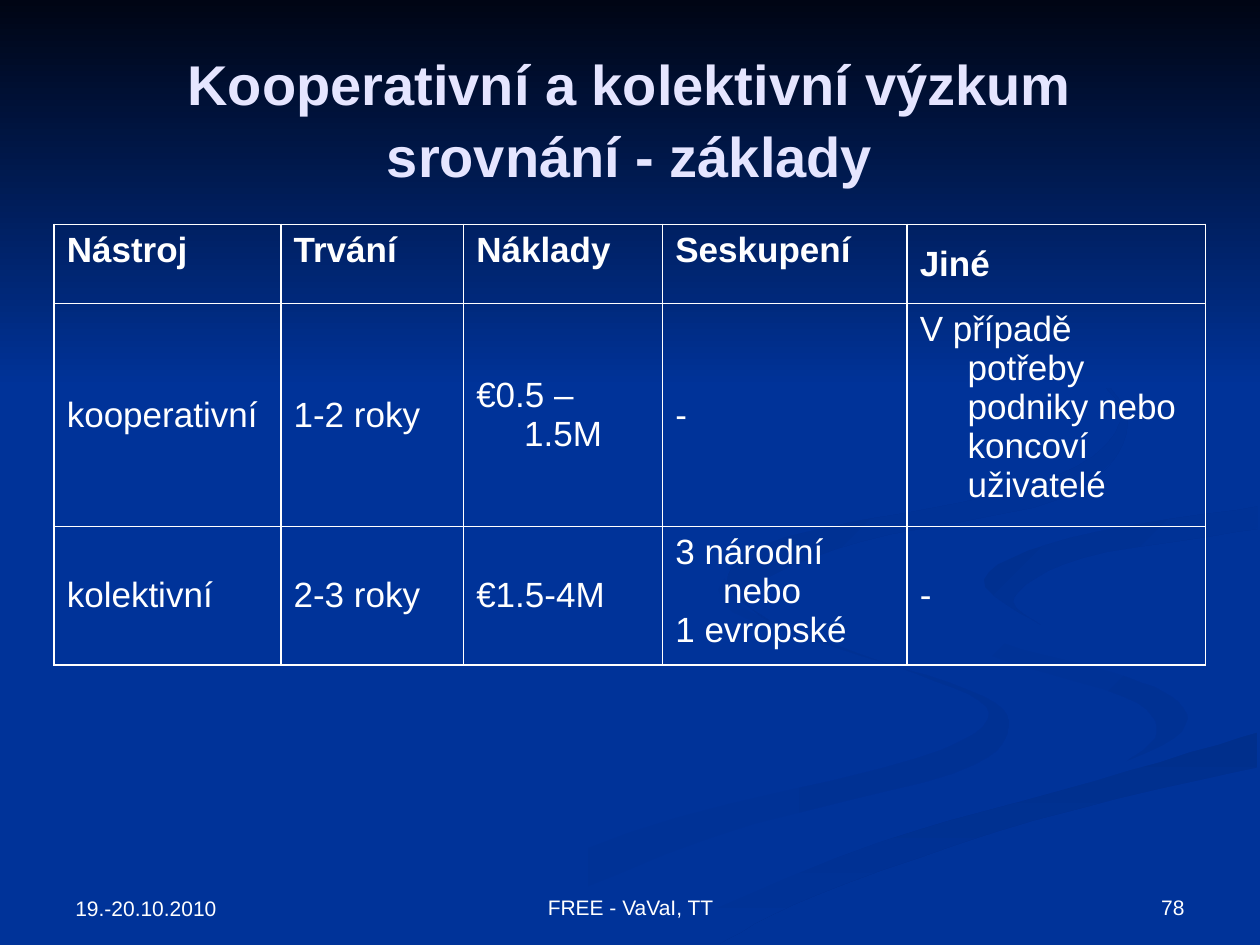
from lxml import etree
from pptx import Presentation
from pptx import util as u
from pptx.dml.color import RGBColor
from pptx.enum import shapes, text
from pptx.oxml.ns import qn

PX = 9144  # EMU per px: 100 px to the inch
WIDTH, HEIGHT = 1000, 750
CURVE_STEPS = 6

BLUE = RGBColor(0x00, 0x33, 0x99)
NIGHT = RGBColor(0x00, 0x05, 0x14)
SHADE = RGBColor(0x00, 0x30, 0x90)
DEEP_SHADE = RGBColor(0x00, 0x2F, 0x8C)
SOFT_SHADE = RGBColor(0x00, 0x31, 0x93)
WHITE = RGBColor(0xFF, 0xFF, 0xFF)
LAVENDER = RGBColor(0xE5, 0xE5, 0xFF)

TITLE = "Kooperativní a kolektivní výzkum\vsrovnání - základy"
FOOTERS = [
    ("19.-20.10.2010", (50, 684, 233, 52), text.PP_ALIGN.LEFT),
    ("78", (717, 683, 233, 52), text.PP_ALIGN.RIGHT),
    ("FREE - VaVaI, TT", (342, 683, 317, 52), text.PP_ALIGN.CENTER),
]
ROWS = [
    ["Nástroj", "Trvání", "Náklady", "Seskupení", "Jiné"],
    ["kooperativní", "1-2 roky", "€0.5 – 1.5M", "-",
     "V případě potřeby podniky nebo koncoví uživatelé"],
    ["kolektivní", "2-3 roky", "€1.5-4M", "3 národní nebo\n1 evropské", "-"],
]
TABLE_LEFT, TABLE_TOP = 43, 178
COLUMN_WIDTHS = [180, 145, 158, 194, 237]
ROW_HEIGHTS = [63, 158, 94]
TOP_CELLS = {(0, 0), (0, 1), (0, 2), (0, 3), (1, 4), (2, 3)}
HANGING = 38

# Each wave: first colour, last colour, clockwise angle, its two edges
WAVES = [
    (BLUE, SOFT_SHADE, 0,
     [(575, 459), (594, 485), (682, 519), (781, 553), (800, 581), (756, 614), (564, 665),
      (361, 749)],
     [(300, 749), (499, 661), (727, 602), (785, 566), (728, 535), (593, 491), (570, 468)]),
    (BLUE, SOFT_SHADE, 45,
     [(724, 464), (758, 498), (870, 530), (930, 553), (941, 581), (894, 605)],
     [(894, 605), (918, 581), (892, 553), (766, 512), (724, 464)]),
    (DEEP_SHADE, BLUE, 90,
     [(503, 749), (569, 719), (696, 669), (867, 620), (998, 581)],
     [(998, 609), (821, 651), (649, 710), (571, 749)]),
    (BLUE, BLUE, 0,
     [(999, 387), (808, 417), (725, 464), (793, 509), (905, 540), (943, 570), (892, 605),
      (704, 655), (477, 749)],
     [(503, 749), (696, 669), (868, 620), (999, 581)],
     [(999, 538), (848, 503), (781, 463), (850, 427), (999, 402)]),
    (SHADE, BLUE, 45,
     [(998, 402), (849, 427), (781, 460), (826, 496)],
     [(826, 496), (805, 474), (859, 443), (998, 420)]),
    (SHADE, BLUE, 45,
     [(762, 233), (864, 291), (894, 344), (841, 396), (683, 430), (593, 470), (622, 500)],
     [(622, 500), (577, 462), (625, 426), (818, 386), (889, 335), (846, 279), (762, 233)]),
]


def smooth_edge(points):
    """Return points along a Catmull-Rom curve through the given ones."""
    padded = [points[0], *points, points[-1]]
    curve = []
    for before, start, end, after in zip(padded, padded[1:], padded[2:], padded[3:]):
        for step in range(CURVE_STEPS):
            t = step / CURVE_STEPS
            curve.append(tuple(
                b + t / 2 * (c - a + t * (2 * a - 5 * b + 4 * c - d
                                          + t * (3 * b - a - 3 * c + d)))
                for a, b, c, d in zip(before, start, end, after)))
    return curve + [points[-1]]


def paint(shape, first, last, angle):
    """Fill without outline or shadow; the angle runs clockwise."""
    shape.shadow.inherit = False
    shape.line.fill.background()
    if first == last:
        shape.fill.solid()
        shape.fill.fore_color.rgb = first
        return
    shape.fill.gradient()
    shape.fill.gradient_angle = 360 - angle
    for stop, color in zip(shape.fill.gradient_stops, (first, last)):
        stop.color.rgb = color


def write(frame, content, *, size, color=WHITE, bold=False, align=text.PP_ALIGN.LEFT,
          hanging=0, spacing=None):
    frame.word_wrap = True
    frame.text = content
    for paragraph in frame.paragraphs:
        paragraph.alignment = align
        if spacing:
            paragraph.line_spacing = spacing
        if hanging:
            properties = paragraph._p.get_or_add_pPr()
            properties.set("marL", str(hanging * PX))
            properties.set("indent", str(-hanging * PX))
        for run in paragraph.runs:
            run.font.name = "Arial"
            run.font.size = u.Pt(size)
            run.font.bold = bold
            run.font.color.rgb = color


def add_text(slide, content, box, anchor, **style):
    frame = slide.shapes.add_textbox(*(side * PX for side in box)).text_frame
    frame.vertical_anchor = anchor
    write(frame, content, **style)


def add_borders(cell):
    properties = cell._tc.get_or_add_tcPr()
    for position, side in enumerate(("a:lnL", "a:lnR", "a:lnT", "a:lnB")):
        line = etree.Element(qn(side), w=str(u.Pt(1)))
        fill = etree.SubElement(line, qn("a:solidFill"))
        etree.SubElement(fill, qn("a:srgbClr"), val=str(WHITE))
        properties.insert(position, line)


def add_background(slide):
    slide.background.fill.solid()
    slide.background.fill.fore_color.rgb = BLUE
    for first, last, angle, *edges in WAVES:
        outline = [point for edge in edges for point in smooth_edge(edge)]
        builder = slide.shapes.build_freeform(*outline[0], scale=PX)
        builder.add_line_segments(outline[1:], close=True)
        paint(builder.convert_to_shape(), first, last, angle)
    sky = slide.shapes.add_shape(shapes.MSO_SHAPE.RECTANGLE, 0, 0, WIDTH * PX, 308 * PX)
    paint(sky, NIGHT, BLUE, 90)


def add_comparison(slide):
    table = slide.shapes.add_table(
        len(ROWS), len(COLUMN_WIDTHS), TABLE_LEFT * PX, TABLE_TOP * PX,
        sum(COLUMN_WIDTHS) * PX, sum(ROW_HEIGHTS) * PX).table
    table.first_row = table.horz_banding = False
    for column, width in zip(table.columns, COLUMN_WIDTHS):
        column.width = width * PX
    for row, height in zip(table.rows, ROW_HEIGHTS):
        row.height = height * PX
    for r, row in enumerate(ROWS):
        for c, content in enumerate(row):
            cell = table.cell(r, c)
            cell.fill.background()
            at_top = (r, c) in TOP_CELLS
            cell.vertical_anchor = text.MSO_ANCHOR.TOP if at_top else text.MSO_ANCHOR.MIDDLE
            write(cell.text_frame, content, size=20, bold=r == 0, hanging=HANGING)
            add_borders(cell)


def main():
    presentation = Presentation()
    presentation.slide_width = WIDTH * PX
    presentation.slide_height = HEIGHT * PX
    slide = presentation.slides.add_slide(presentation.slide_layouts[6])
    add_background(slide)
    for content, box, align in FOOTERS:
        add_text(slide, content, box, text.MSO_ANCHOR.BOTTOM, size=12, align=align)
    add_text(slide, TITLE, (50, 30, 900, 125), text.MSO_ANCHOR.MIDDLE, size=32,
             color=LAVENDER, bold=True, align=text.PP_ALIGN.CENTER, spacing=1.07)
    add_comparison(slide)
    presentation.save("out.pptx")


if __name__ == "__main__":
    main()
